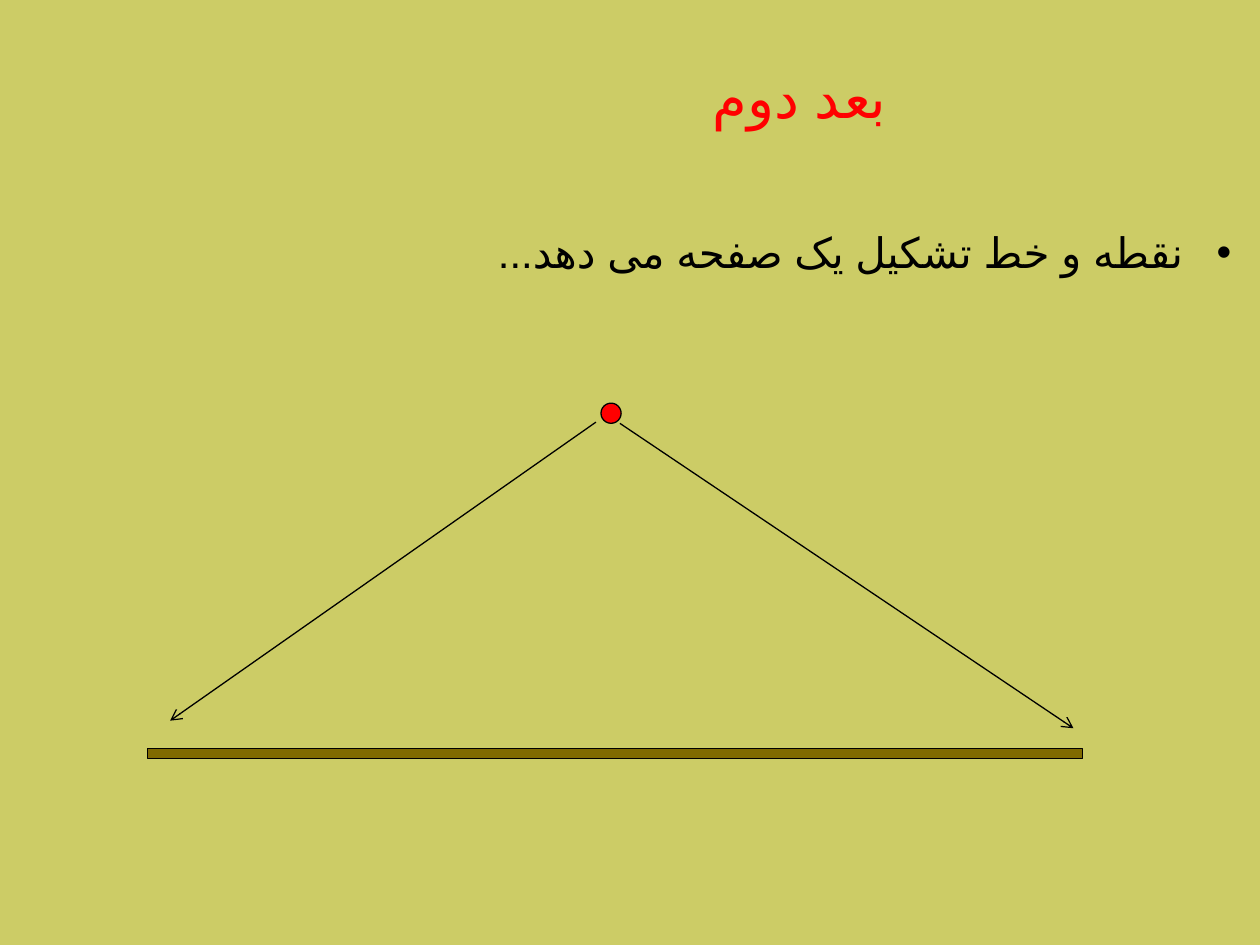
from dataclasses import dataclass
from lxml.etree import SubElement
from pptx import Presentation
from pptx.dml.color import RGBColor
from pptx.enum.lang import MSO_LANGUAGE_ID as Lang
from pptx.enum.shapes import MSO_CONNECTOR as Link, MSO_SHAPE as Form
from pptx.enum.text import MSO_ANCHOR as Anchor, PP_ALIGN as Align
from pptx.oxml.ns import qn
from pptx.slide import Slide
from pptx.util import Inches, Pt

OLIVE = RGBColor(0xCC, 0xCC, 0x66)
BROWN = RGBColor(0x80, 0x6A, 0x00)
RED = RGBColor(0xFF, 0x00, 0x00)
BLACK = RGBColor(0x00, 0x00, 0x00)
FONT = "Arial"
WIDE, HIGH = 10, 7.5
HANG = Inches(0.38)


@dataclass(frozen=True)
class Box:
    left: float
    top: float
    width: float
    height: float

    def place(self) -> tuple[int, ...]:
        """Give the box as slide lengths."""
        return tuple(Inches(n) for n in (self.left, self.top, self.width, self.height))


@dataclass(frozen=True)
class Label:
    box: Box
    text: str
    size: int
    color: RGBColor
    align: Align
    anchor: Anchor
    bullet: str = ""


@dataclass(frozen=True)
class Solid:
    box: Box
    form: Form
    color: RGBColor


@dataclass(frozen=True)
class Arrow:
    start: tuple[float, float]
    end: tuple[float, float]


LABELS = (
    Label(Box(2.89, 0.23, 6.91, 0.85), "بعد دوم", 32, RED, Align.CENTER, Anchor.BOTTOM),
    Label(Box(2.95, 1.75, 6.92, 4.95), "نقطه و خط تشکیل یک صفحه می دهد...", 24,
          BLACK, Align.RIGHT, Anchor.TOP, "•"),
)
SOLIDS = (
    Solid(Box(1.17, 5.94, 7.42, 0.08), Form.RECTANGLE, BROWN),
    Solid(Box(4.77, 3.2, 0.16, 0.16), Form.OVAL, RED),
)
ARROWS = (
    Arrow((4.73, 3.35), (1.35, 5.72)),
    Arrow((4.92, 3.36), (8.52, 5.78)),
)


def write(slide: Slide, label: Label) -> None:
    """Add a right-to-left text box with an optional bullet."""
    frame = slide.shapes.add_textbox(*label.box.place()).text_frame
    frame.word_wrap = True
    frame.vertical_anchor = label.anchor
    para = frame.paragraphs[0]
    para.alignment = label.align
    props = para._p.get_or_add_pPr()
    props.set("rtl", "1")
    if label.bullet:
        props.set("marL", str(HANG))
        props.set("indent", str(-HANG))
        tint = SubElement(props, qn("a:buClr"))
        SubElement(tint, qn("a:srgbClr"), val=str(label.color))
        SubElement(props, qn("a:buFont"), typeface=FONT)
        SubElement(props, qn("a:buChar"), char=label.bullet)
    run = para.add_run()
    run.text = label.text
    run.font.size = Pt(label.size)
    run.font.name = FONT
    run.font.language_id = Lang.FARSI
    run.font.color.rgb = label.color
    SubElement(run._r.get_or_add_rPr(), qn("a:cs"), typeface=FONT)


def draw(slide: Slide, solid: Solid) -> None:
    """Add a filled shape with a thin black edge."""
    shape = slide.shapes.add_shape(solid.form, *solid.box.place())
    shape.shadow.inherit = False
    shape.fill.solid()
    shape.fill.fore_color.rgb = solid.color
    shape.line.color.rgb = BLACK
    shape.line.width = Pt(0.75)


def point(slide: Slide, arrow: Arrow) -> None:
    """Add a thin line with an open arrowhead at its end."""
    ends = (Inches(n) for n in arrow.start + arrow.end)
    line = slide.shapes.add_connector(Link.STRAIGHT, *ends)
    line.line.color.rgb = BLACK
    line.line.width = Pt(0.75)
    SubElement(line.line._get_or_add_ln(), qn("a:tailEnd"), type="arrow")
    SubElement(line._element.spPr, qn("a:effectLst"))


def main() -> None:
    """Build and save the slide."""
    deck = Presentation()
    deck.slide_width, deck.slide_height = Inches(WIDE), Inches(HIGH)
    slide = deck.slides.add_slide(deck.slide_layouts[6])
    back = slide.background.fill
    back.solid()
    back.fore_color.rgb = OLIVE
    for label in LABELS:
        write(slide, label)
    for solid in SOLIDS:
        draw(slide, solid)
    for arrow in ARROWS:
        point(slide, arrow)
    deck.save("out.pptx")


if __name__ == "__main__":
    main()
